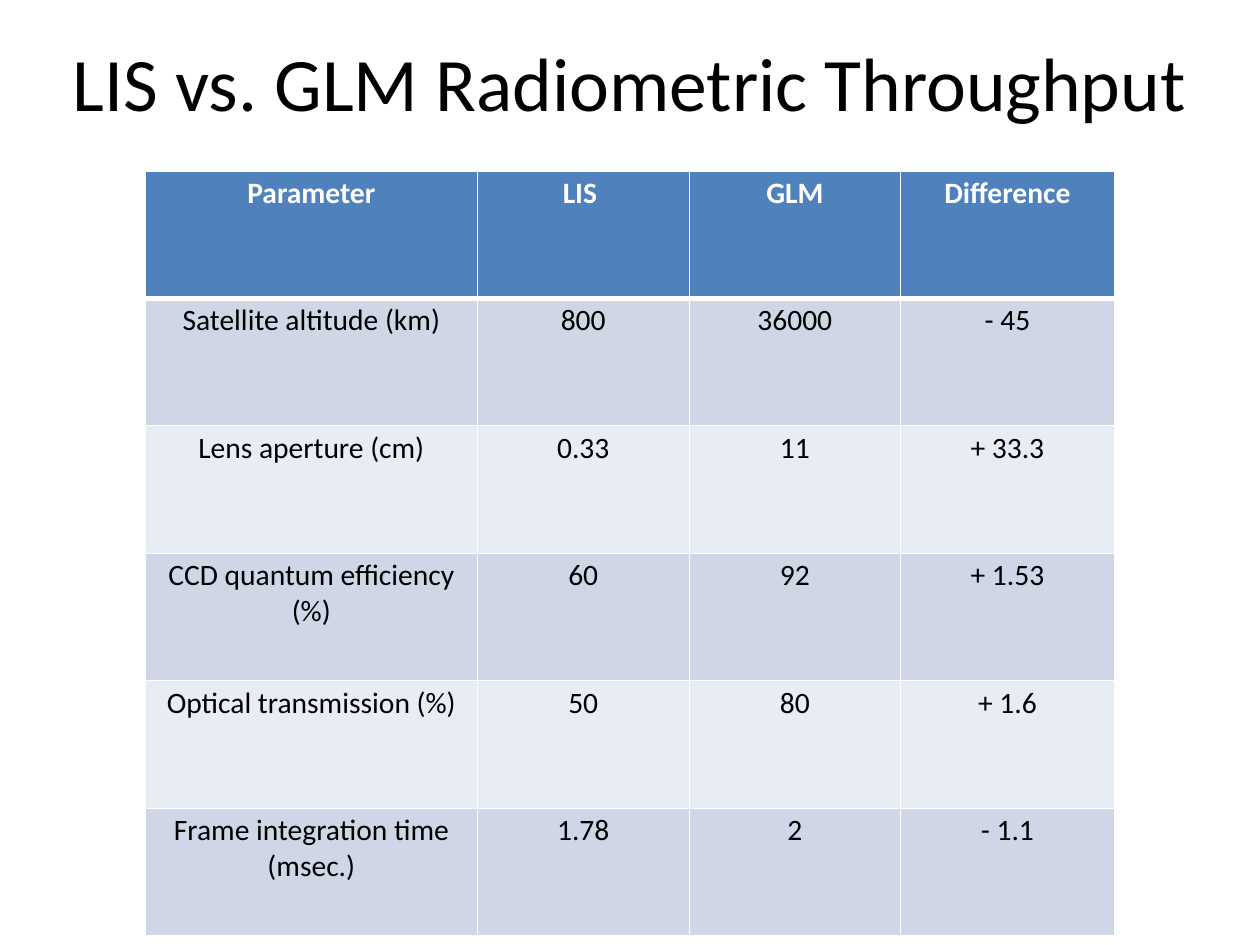
from lxml.etree import SubElement
from pptx import Presentation
from pptx.dml.color import RGBColor
from pptx.enum.text import MSO_ANCHOR, PP_ALIGN
from pptx.oxml.ns import qn
from pptx.util import Pt

BLACK = RGBColor(0x00, 0x00, 0x00)
WHITE = RGBColor(0xFF, 0xFF, 0xFF)
HEADER_BLUE = RGBColor(0x4F, 0x81, 0xBD)
BAND_DARK = RGBColor(0xCF, 0xD7, 0xE7)
BAND_LIGHT = RGBColor(0xE8, 0xEC, 0xF4)

TITLE = "LIS vs. GLM Radiometric Throughput"
THROUGHPUT = [
    ["Parameter", "LIS ", "GLM", "Difference"],
    ["Satellite altitude (km)", "800", "36000", "- 45"],
    ["Lens aperture (cm)", "0.33", "11", "+ 33.3"],
    ["CCD quantum efficiency (%)", "60", "92", "+ 1.53"],
    ["Optical transmission (%)", "50", "80", "+ 1.6"],
    ["Frame integration time (msec.)", "1.78", "2", "- 1.1"],
]
COLUMN_WIDTHS = [270, 172, 172, 173.5]
ROW_HEIGHT = 103.6


class SlideBuilder:
    font = "Calibri"
    title_size = 61.4
    cell_size = 24
    title_inset = 5
    cell_inset = 3.6
    thin, thick = 1, 4

    def __init__(self, slide):
        self.s = slide

    def set_text(self, tf, text, size, color, inset, bold=False):
        tf.word_wrap = True
        tf.text = text
        p = tf.paragraphs[0]
        p.alignment = PP_ALIGN.CENTER
        p.font.name = self.font
        p.font.size = Pt(size)
        p.font.bold = bold
        p.font.color.rgb = color
        tf.margin_left = tf.margin_right = Pt(inset)
        tf.margin_top = tf.margin_bottom = Pt(inset)

    def title(self, text, left, top, width, height):
        sp = self.s.shapes.add_textbox(Pt(left), Pt(top), Pt(width), Pt(height))
        tf = sp.text_frame
        self.set_text(tf, text, self.title_size, BLACK, self.title_inset)
        tf.vertical_anchor = MSO_ANCHOR.MIDDLE

    def borders(self, cell, row):
        tc_pr = cell._tc.get_or_add_tcPr()
        top = self.thick if row == 1 else self.thin
        bottom = self.thick if row == 0 else self.thin
        widths = {"L": self.thin, "R": self.thin, "T": top, "B": bottom}
        for side, width in widths.items():
            ln = SubElement(tc_pr, qn(f"a:ln{side}"), w=str(Pt(width)))
            fill = SubElement(ln, qn("a:solidFill"))
            SubElement(fill, qn("a:srgbClr"), val=str(WHITE))

    def cell(self, cell, text, row):
        header = row == 0
        tf = cell.text_frame
        self.set_text(tf, text, self.cell_size, WHITE if header else BLACK,
                      self.cell_inset, header)
        cell.margin_left = cell.margin_right = Pt(self.cell_inset)
        cell.margin_top = cell.margin_bottom = Pt(self.cell_inset)
        cell.vertical_anchor = MSO_ANCHOR.TOP
        # Borders must precede the fill in the cell properties
        self.borders(cell, row)
        band = BAND_DARK if row % 2 else BAND_LIGHT
        cell.fill.solid()
        cell.fill.fore_color.rgb = HEADER_BLUE if header else band

    def table(self, rows, left, top, widths, row_height):
        frame = self.s.shapes.add_table(
            len(rows), len(widths), Pt(left), Pt(top),
            Pt(sum(widths)), Pt(row_height * len(rows)))
        table = frame.table
        for column, width in zip(table.columns, widths):
            column.width = Pt(width)
        for i, texts in enumerate(rows):
            table.rows[i].height = Pt(row_height)
            for j, text in enumerate(texts):
                self.cell(table.cell(i, j), text, i)


def main():
    prs = Presentation()
    prs.slide_width, prs.slide_height = Pt(1024), Pt(768)
    builder = SlideBuilder(prs.slides.add_slide(prs.slide_layouts[6]))

    # Heading
    builder.title(TITLE, 51, 2, 922, 128)

    # Comparison table
    builder.table(THROUGHPUT, 118, 139, COLUMN_WIDTHS, ROW_HEIGHT)

    prs.save("out.pptx")


if __name__ == "__main__":
    main()
